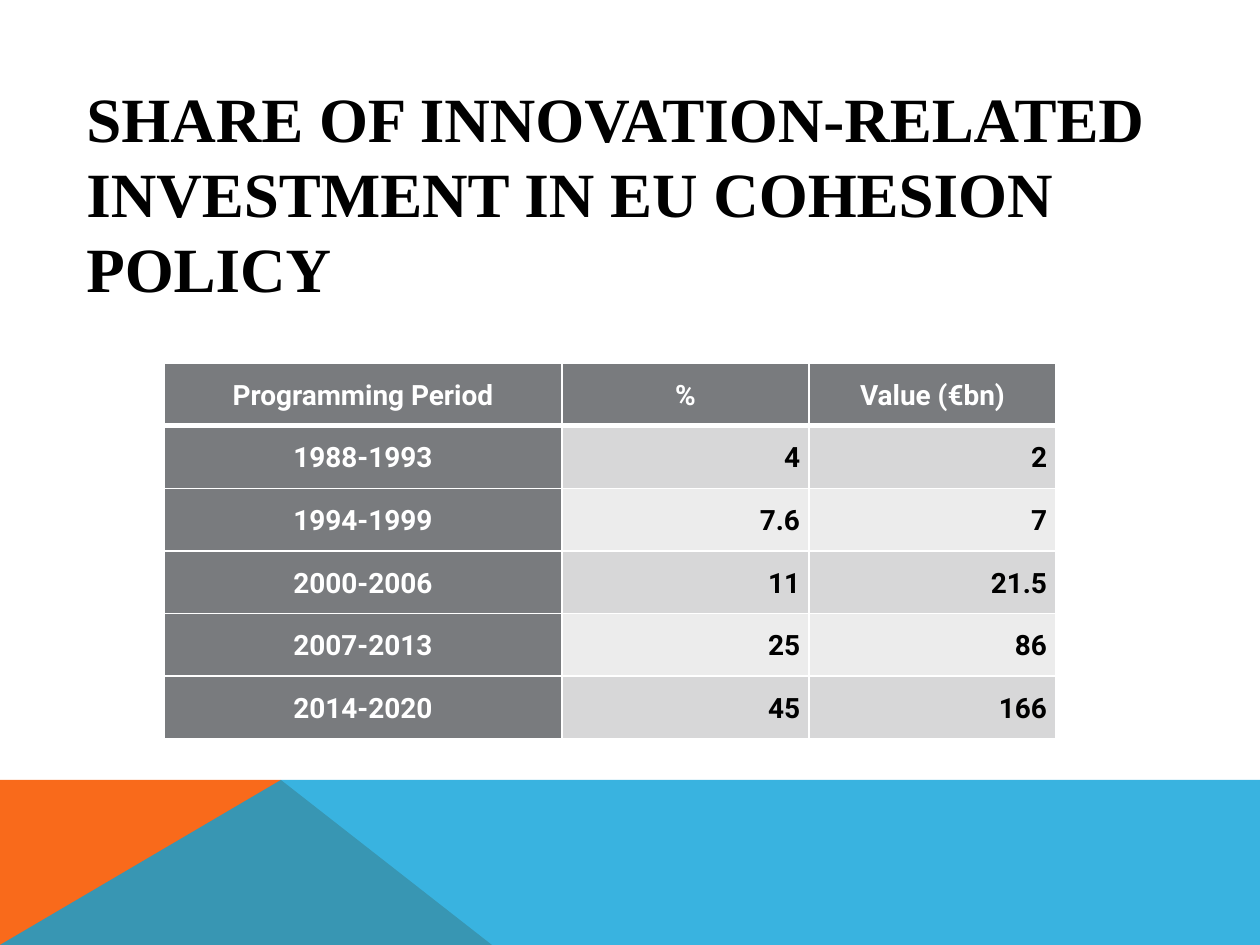
from lxml.etree import SubElement
from pptx import Presentation
from pptx.dml.color import RGBColor
from pptx.enum.text import MSO_ANCHOR, PP_ALIGN
from pptx.oxml.ns import qn
from pptx.util import Pt

SCALE = 914400 // 126
COLORS = {
    "white": "FFFFFF", "black": "000000", "orange": "F96A1B", "blue": "08A1D9",
    "header": "797B7E", "dark_band": "D7D7D8", "light_band": "ECECEC",
}
TITLE = "SHARE OF INNOVATION-RELATED INVESTMENT IN EU COHESION POLICY"
ROWS = [
    ("Programming Period", "%", "Value (€bn)"),
    ("1988-1993", "4", "2"),
    ("1994-1999", "7.6", "7"),
    ("2000-2006", "11", "21.5"),
    ("2007-2013", "25", "86"),
    ("2014-2020", "45", "166"),
]


def px(length):
    """Turn whole pixels into EMU."""
    return length * SCALE


def assign(target, values):
    """Set each attribute of the target from a dict of values."""
    for name, value in values.items():
        setattr(target, name, value)


class SlideBuilder:
    """Hold the style and the current page, and draw each kind of element."""

    title_font = {"name": "Times New Roman", "size": Pt(36), "bold": True}
    table_font = {"name": "Roboto", "size": Pt(16), "bold": True}
    title_frame = {"word_wrap": True, "vertical_anchor": MSO_ANCHOR.MIDDLE}
    cell_margins = {"margin_left": px(9), "margin_right": px(9),
                    "margin_top": 0, "margin_bottom": 0}

    def __init__(self, page):
        """Start drawing on the page."""
        self.page = page

    def color(self, name):
        """Look up a named colour."""
        return RGBColor.from_string(COLORS[name])

    def paint(self, target, name):
        """Give the target a solid fill."""
        target.fill.solid()
        target.fill.fore_color.rgb = self.color(name)

    def add_span(self, para, text, font, color, layout):
        """Put one styled span into the paragraph."""
        assign(para, layout)
        span = para.add_run()
        span.text = text
        assign(span.font, font)
        span.font.color.rgb = self.color(color)

    def polygon(self, points, color, opacity=100):
        """Draw a closed outline with a flat fill."""
        pen = self.page.shapes.build_freeform(*points[0], scale=SCALE)
        pen.add_line_segments(points[1:], close=True)
        shape = pen.convert_to_shape()
        shape.shadow.inherit = False
        shape.line.fill.background()
        self.paint(shape, color)
        if opacity < 100:
            tint = next(shape.element.spPr.iter(qn("a:srgbClr")))
            SubElement(tint, qn("a:alpha"), val=str(opacity * 1000))

    def title(self, text, left, top, width, height):
        """Add the heading."""
        box = self.page.shapes.add_textbox(px(left), px(top), px(width), px(height))
        assign(box.text_frame, self.title_frame)
        self.add_span(box.text_frame.paragraphs[0], text, self.title_font, "black",
                      {"line_spacing": Pt(43)})

    def borders(self, cell, bottom):
        """Draw white cell borders, with the bottom width in points."""
        properties = cell._tc.get_or_add_tcPr()
        for side, width in (("L", 1), ("R", 1), ("T", 1), ("B", bottom)):
            line = SubElement(properties, qn(f"a:ln{side}"), w=str(Pt(width)))
            fill = SubElement(line, qn("a:solidFill"))
            SubElement(fill, qn("a:srgbClr"), val=COLORS["white"])

    def table(self, rows, left, top, widths, height):
        """Add a table with a header row, a header column and banded values."""
        frame = self.page.shapes.add_table(
            len(rows), len(widths), px(left), px(top), px(sum(widths)), px(height))
        grid = frame.table
        grid.horz_banding = False
        for column, width in zip(grid.columns, widths):
            column.width = px(width)
        for r, values in enumerate(rows):
            band = "dark_band" if r % 2 else "light_band"
            for c, text in enumerate(values):
                heading = r == 0 or c == 0
                cell = grid.cell(r, c)
                assign(cell, self.cell_margins)
                self.borders(cell, 3 if r == 0 else 1)
                self.paint(cell, "header" if heading else band)
                align = PP_ALIGN.CENTER if heading else PP_ALIGN.RIGHT
                self.add_span(cell.text_frame.paragraphs[0], text, self.table_font,
                              "white" if heading else "black",
                              {"alignment": align, "line_spacing": 1.5})


def main():
    """Build and save the deck."""
    deck = Presentation()
    assign(deck, {"slide_width": px(1260), "slide_height": px(945)})
    builder = SlideBuilder(deck.slides.add_slide(deck.slide_layouts[6]))
    builder.polygon([(0, 945), (0, 780), (281, 780), (492, 945)], "orange")
    builder.polygon([(0, 945), (281, 780), (1260, 780), (1260, 945)], "blue", 80)
    builder.title(TITLE, 74, 106, 1134, 173)
    builder.table(ROWS, 164, 363, (398, 247, 247), 376)
    deck.save("out.pptx")


if __name__ == "__main__":
    main()
